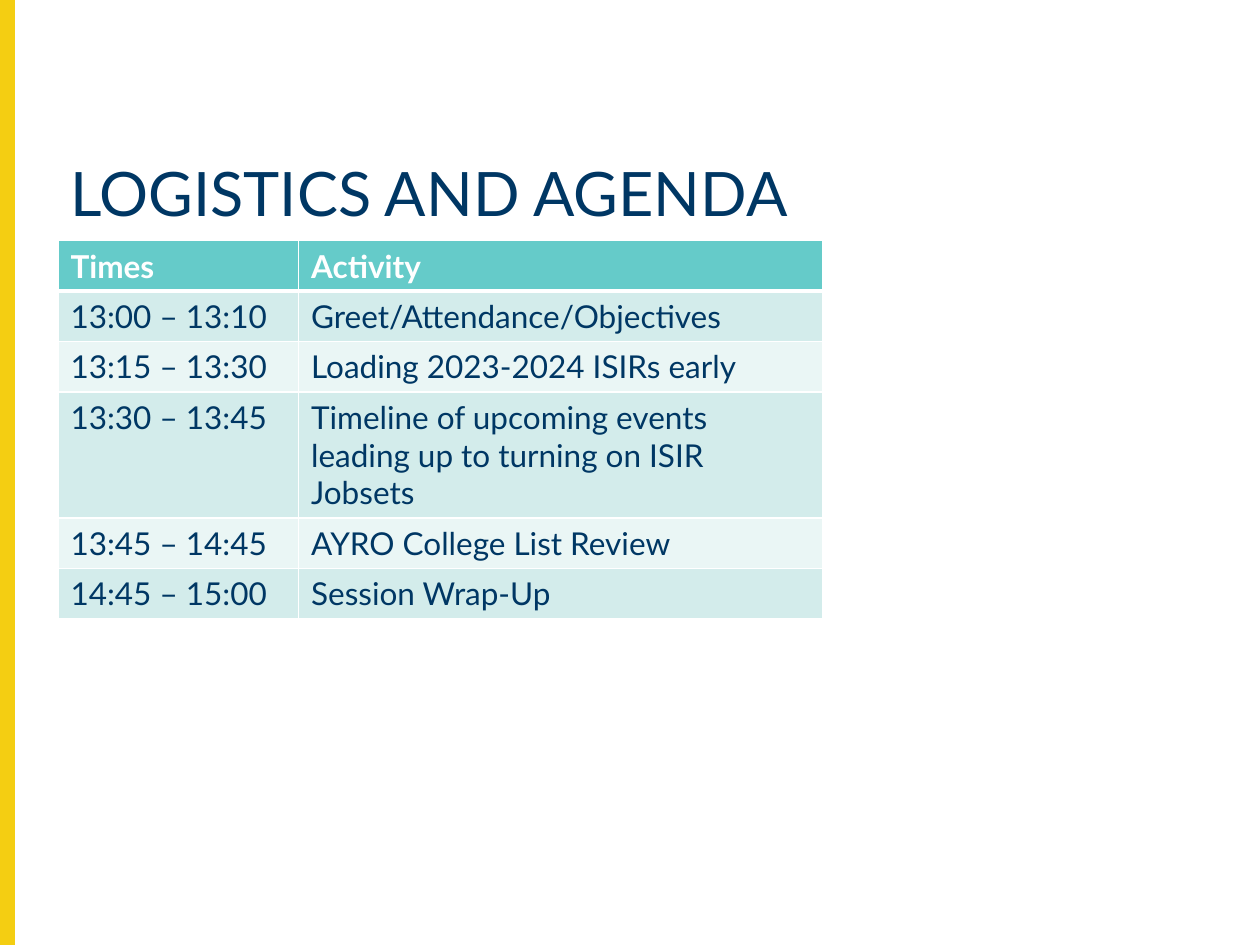
from lxml import etree
from pptx import Presentation
from pptx import util as u
from pptx.dml.color import RGBColor
from pptx.enum import shapes, text
from pptx.oxml import ns

COLORS = {
    "navy": "003764",
    "yellow": "F4CE12",
    "teal": "65CBC9",
    "band_dark": "D3ECEB",
    "band_light": "EAF6F5",
    "white": "FFFFFF",
}


def write_text(frame, content, color, **font_format):
    paragraph = frame.paragraphs[0]
    run = paragraph.add_run()
    run.text = content
    run.font.color.rgb = RGBColor.from_string(COLORS[color])
    for name, value in {"name": "Lato", **font_format}.items():
        setattr(run.font, name, value)
    return paragraph


def add_borders(cell, widths):
    properties = cell._tc.get_or_add_tcPr()
    for index, (side, points) in enumerate(widths.items()):
        line = etree.Element(ns.qn(f"a:{side}"), w=str(u.Pt(points)))
        fill = etree.SubElement(line, ns.qn("a:solidFill"))
        etree.SubElement(fill, ns.qn("a:srgbClr"), val=COLORS["white"])
        properties.insert(index, line)


presentation = Presentation()
presentation.slide_width = u.Inches(10)
presentation.slide_height = u.Inches(7.5)
slide = presentation.slides.add_slide(presentation.slide_layouts[6])

# Yellow bar on the left edge
bar = slide.shapes.add_shape(
    shapes.MSO_SHAPE.RECTANGLE, 0, 0, u.Inches(0.11), u.Inches(7.5))
bar.shadow.inherit = False
bar.fill.solid()
for color_format in (bar.fill.fore_color, bar.line.color):
    color_format.rgb = RGBColor.from_string(COLORS["yellow"])
bar.line.width = u.Pt(1)

# Title
title = slide.shapes.add_textbox(
    u.Inches(0.46), u.Inches(1.25), u.Inches(9.33), u.Inches(0.79))
title.text_frame.word_wrap = True
title.text_frame.vertical_anchor = text.MSO_ANCHOR.TOP
paragraph = write_text(
    title.text_frame, "LOGISTICS AND AGENDA", "navy", size=u.Pt(35))
paragraph.line_spacing = 0.9

# Agenda table
agenda = [
    ("Times", "Activity"),
    ("13:00 – 13:10", "Greet/Attendance/Objectives"),
    ("13:15 – 13:30", "Loading 2023-2024 ISIRs early"),
    ("13:30 – 13:45",
     "Timeline of upcoming events leading up to turning on ISIR Jobsets"),
    ("13:45 – 14:45", "AYRO College List Review"),
    ("14:45 – 15:00", "Session Wrap-Up"),
]
column_widths = [1.91, 4.16]
row_heights = [0.4, 0.4, 0.4, 1, 0.4, 0.4]
table = slide.shapes.add_table(
    len(agenda), len(column_widths), u.Inches(0.46), u.Inches(1.91),
    u.Inches(sum(column_widths)), u.Inches(sum(row_heights))).table
for column, width in zip(table.columns, column_widths):
    column.width = u.Inches(width)

for row_index, (entries, height) in enumerate(zip(agenda, row_heights)):
    table.rows[row_index].height = u.Inches(height)
    header = row_index == 0
    band = "band_dark" if row_index % 2 else "band_light"
    for column_index, entry in enumerate(entries):
        cell = table.cell(row_index, column_index)
        cell.fill.solid()
        cell.fill.fore_color.rgb = RGBColor.from_string(
            COLORS["teal" if header else band])
        write_text(cell.text_frame, entry, "white" if header else "navy",
                   size=u.Pt(18), bold=header)
        add_borders(cell, {"lnL": 1, "lnR": 1,
                           "lnT": 3 if row_index == 1 else 1,
                           "lnB": 3 if header else 1})

presentation.save("out.pptx")
